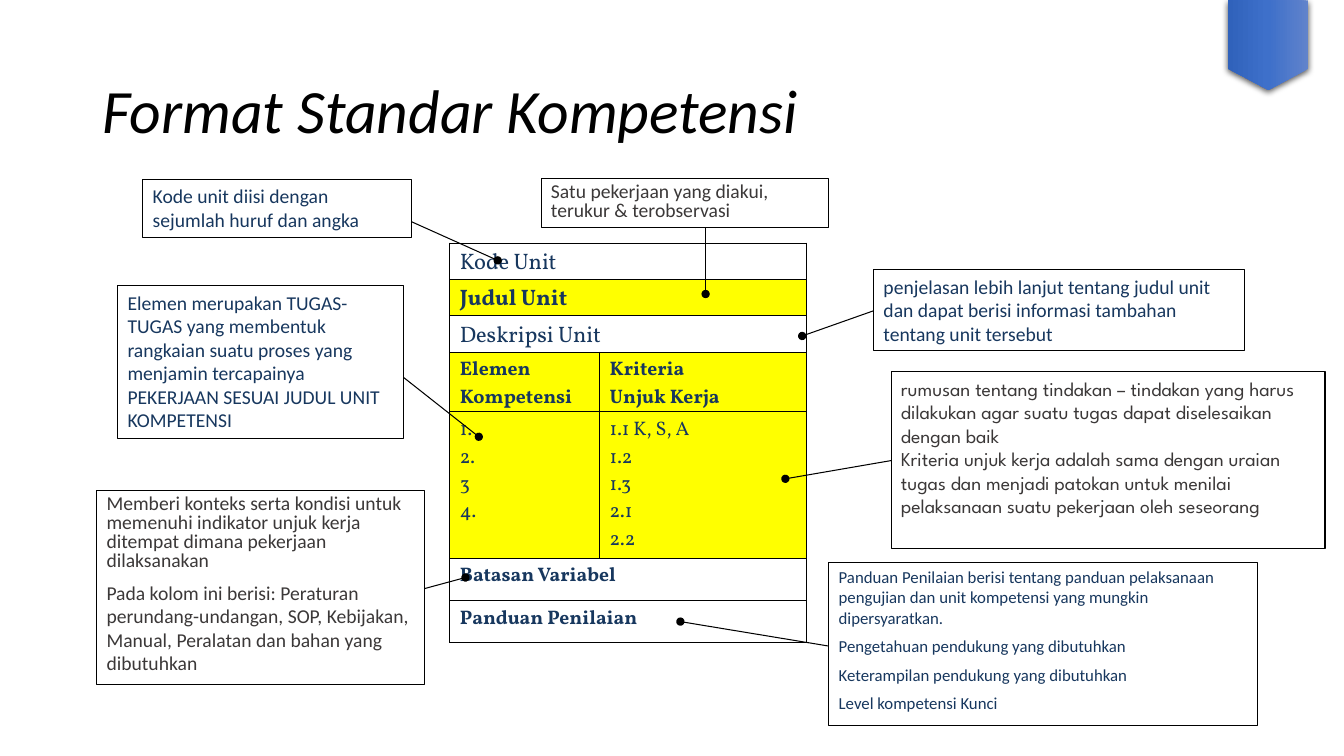
from dataclasses import dataclass
from copy import deepcopy

from lxml.etree import SubElement
from pptx import Presentation
from pptx.dml.color import RGBColor
from pptx.enum.shapes import MSO_CONNECTOR, MSO_SHAPE
from pptx.enum.text import MSO_ANCHOR, MSO_AUTO_SIZE, PP_ALIGN
from pptx.oxml import parse_xml
from pptx.oxml.ns import nsdecls, qn
from pptx.util import Pt


@dataclass(frozen=True)
class Theme:
    black: RGBColor = RGBColor.from_string("000000")
    white: RGBColor = RGBColor.from_string("FFFFFF")
    yellow: RGBColor = RGBColor.from_string("FFFF00")
    navy: RGBColor = RGBColor.from_string("17375E")
    grey: RGBColor = RGBColor.from_string("3B3838")
    ribbon: tuple = ("6183CB", "3E70CA", "3062BB")
    sans: str = "Calibri"
    serif: str = "Vollkorn"
    rounded: str = "League Spartan"
    title: Pt = Pt(44)
    heading: Pt = Pt(16)
    body: Pt = Pt(14)
    small: Pt = Pt(12)
    rule: Pt = Pt(0.75)


theme = Theme()


def write(frame, lines, color, **font_values):
    """Fill a text frame with one left-aligned paragraph per line."""
    frame.word_wrap = True
    for number, line in enumerate(lines):
        para = frame.paragraphs[0] if number == 0 else frame.add_paragraph()
        para.alignment = PP_ALIGN.LEFT
        span = para.add_run()
        span.text = line
        span.font.color.rgb = color
        for name, value in font_values.items():
            setattr(span.font, name, value)


deck = Presentation()
deck.slide_width, deck.slide_height = Pt(960), Pt(540)
page = deck.slides.add_slide(deck.slide_layouts[5])

# Title
title = page.shapes.title
title_place = {"left": 66, "top": 29, "width": 828, "height": 104}
for name, value in title_place.items():
    setattr(title, name, Pt(value))
write(title.text_frame, ["Format Standar Kompetensi"], theme.black,
      name=theme.sans, size=theme.title, italic=True)
title.text_frame.auto_size = MSO_AUTO_SIZE.NONE
title.text_frame.vertical_anchor = MSO_ANCHOR.MIDDLE
title.text_frame.paragraphs[0].line_spacing = 0.9

# Unit form: row height, fill, type size, bold, and the lines of each cell
form_rows = [
    (23.9, theme.white, theme.heading, False, [["Kode Unit"]]),
    (23.9, theme.yellow, theme.heading, True, [["Judul Unit"]]),
    (23.9, theme.white, theme.heading, False, [["Deskripsi Unit"]]),
    (40.3, theme.yellow, theme.body, True,
     [["Elemen Kompetensi"], ["Kriteria", "Unjuk Kerja"]]),
    (104.4, theme.yellow, theme.body, False,
     [["1.", "2.", "3", "4."], ["1.1 K, S, A", "1.2", "1.3", "2.1", "2.2"]]),
    (30.2, theme.white, theme.body, True, [["Batasan Variabel"]]),
    (30.2, theme.white, theme.body, True, [["Panduan Penilaian"]]),
]
form_height = sum(row[0] for row in form_rows)
form = page.shapes.add_table(len(form_rows), 2, Pt(321.3), Pt(173.6),
                             Pt(255), Pt(form_height)).table
form.first_row = form.horz_banding = False
for column, width in zip(form.columns, (107, 148)):
    column.width = Pt(width)
for row_number, (height, fill, size, bold, texts) in enumerate(form_rows):
    form.rows[row_number].height = Pt(height)
    if len(texts) == 1:
        form.cell(row_number, 0).merge(form.cell(row_number, 1))
    for column_number in range(2):
        cell = form.cell(row_number, column_number)
        cell.margin_top, cell.margin_bottom = Pt(3.6), Pt(0)
        cell.fill.solid()
        cell.fill.fore_color.rgb = fill
        edges = "RTB" if cell.is_spanned else "LRTB"
        for place, edge in enumerate(edges):
            cell._tc.get_or_add_tcPr().insert(place, parse_xml(
                f'<a:ln{edge} {nsdecls("a")} w="{theme.rule}"><a:solidFill>'
                f'<a:srgbClr val="{theme.black}"/></a:solidFill></a:ln{edge}>'))
        if not cell.is_spanned:
            write(cell.text_frame, texts[column_number], theme.navy,
                  name=theme.serif, size=size, bold=bold)

# Callouts: box, pointer start and end, colour, font, size, first line spacing, text
callouts = [
    ((624, 192.5, 265, 58), (624, 222), (573, 240),
     theme.navy, theme.sans, theme.body, 1,
     ["penjelasan lebih lanjut tentang judul unit dan dapat berisi informasi "
      "tambahan tentang unit tersebut"]),
    ((84, 204, 204, 109), (287.5, 269), (342, 312),
     theme.navy, theme.sans, theme.body, 1,
     ["Elemen merupakan TUGAS-TUGAS yang membentuk rangkaian suatu proses yang "
      "menjamin tercapainya PEKERJAAN SESUAI JUDUL UNIT KOMPETENSI"]),
    ((69, 350.5, 234, 138.5), (303, 420.5), (332.5, 412.5),
     theme.grey, theme.sans, theme.body, 0.8,
     ["Memberi konteks serta kondisi untuk memenuhi indikator unjuk kerja "
      "ditempat dimana pekerjaan dilaksanakan",
      "Pada kolom ini berisi: Peraturan perundang-undangan, SOP, Kebijakan, "
      "Manual, Peralatan dan bahan yang dibutuhkan"]),
    ((592, 401.5, 306, 116.5), (592, 461.5), (486, 444),
     theme.navy, theme.sans, theme.small, 1,
     ["Panduan Penilaian berisi tentang panduan pelaksanaan pengujian dan unit "
      "kompetensi yang mungkin dipersyaratkan.",
      "Pengetahuan pendukung yang dibutuhkan",
      "Keterampilan pendukung yang dibutuhkan",
      "Level kompetensi Kunci"]),
    ((636.5, 265.5, 310, 126.5), (636.5, 329), (561, 342),
     theme.grey, theme.rounded, theme.body, 1,
     ["rumusan tentang tindakan – tindakan yang harus dilakukan agar suatu "
      "tugas dapat diselesaikan dengan baik",
      "Kriteria unjuk kerja adalah sama dengan uraian tugas dan menjadi patokan "
      "untuk menilai pelaksanaan suatu pekerjaan oleh seseorang"]),
    ((386.5, 127.5, 205, 35), (504, 156), (504, 210),
     theme.grey, theme.sans, theme.body, 0.8,
     ["Satu pekerjaan yang diakui, terukur & terobservasi"]),
    ((102, 128, 192, 41.5), (287.5, 155.5), (355.5, 186),
     theme.navy, theme.sans, theme.body, 1,
     ["Kode unit diisi dengan sejumlah huruf dan angka"]),
]
for place, start, end, color, font, size, first_spacing, lines in callouts:
    pointer = page.shapes.add_connector(
        MSO_CONNECTOR.STRAIGHT, *(Pt(value) for value in start + end))
    pointer.line.color.rgb = theme.black
    pointer.line.width = theme.rule
    SubElement(pointer.line._get_or_add_ln(), qn("a:tailEnd"), type="oval")
    SubElement(pointer._element.spPr, qn("a:effectLst"))

    box = page.shapes.add_shape(MSO_SHAPE.RECTANGLE, *(Pt(value) for value in place))
    box.shadow.inherit = False
    box.fill.solid()
    box.fill.fore_color.rgb = theme.white
    box.line.color.rgb = theme.black
    box.line.width = theme.rule
    box.text_frame.vertical_anchor = MSO_ANCHOR.TOP
    write(box.text_frame, lines, color, name=font, size=size)
    box.text_frame.paragraphs[0].line_spacing = first_spacing
    if font == theme.sans:
        for para in box.text_frame.paragraphs[1:]:
            para.space_before = Pt(size.pt / 2)

# Corner ribbon
ribbon = page.shapes.add_shape(MSO_SHAPE.PENTAGON, Pt(874), Pt(3.5), Pt(64), Pt(57.5))
ribbon.rotation = 90
ribbon.adjustments[0] = 0.265
ribbon.line.fill.background()
ribbon.fill.gradient()
ribbon.fill.gradient_angle = 270
first_stop = ribbon.fill._fill._gradFill.gsLst[0]
first_stop.addnext(deepcopy(first_stop))
for stop, position, color in zip(ribbon.fill.gradient_stops, (0, 0.5, 1), theme.ribbon):
    stop.position = position
    stop.color.rgb = RGBColor.from_string(color)
ribbon.shadow.inherit = False
shadow = SubElement(ribbon._element.spPr.find(qn("a:effectLst")), qn("a:outerShdw"),
                    blurRad=str(Pt(4.5)), dist=str(Pt(1.5)), dir="5400000",
                    algn="ctr", rotWithShape="0")
shadow_color = SubElement(shadow, qn("a:srgbClr"), val=str(theme.black))
SubElement(shadow_color, qn("a:alpha"), val="63000")

deck.save("out.pptx")
